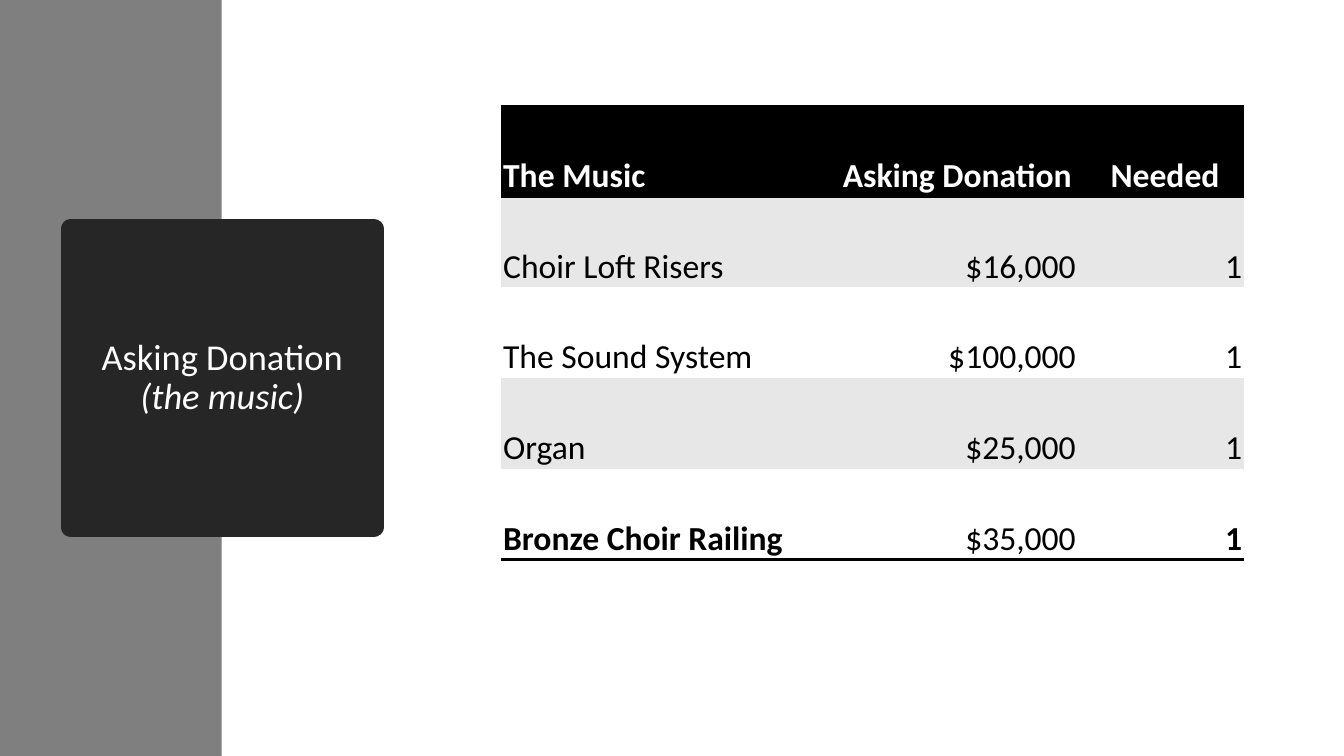
"""Build the slide that lists the asking donations for the music."""
from pptx import Presentation
from pptx.dml.color import RGBColor
from pptx.enum.shapes import MSO_SHAPE
from pptx.enum.text import MSO_ANCHOR, MSO_AUTO_SIZE, PP_ALIGN
from pptx.oxml import parse_xml
from pptx.oxml.ns import nsdecls, qn
from pptx.util import Inches, Pt

RECTANGLE = MSO_SHAPE.RECTANGLE
MIDDLE, BOTTOM = MSO_ANCHOR.MIDDLE, MSO_ANCHOR.BOTTOM
LEFT, CENTER, RIGHT = PP_ALIGN.LEFT, PP_ALIGN.CENTER, PP_ALIGN.RIGHT
NO_AUTOFIT = MSO_AUTO_SIZE.NONE
FONT_NAME = "Calibri"
PLAIN_TABLE_STYLE = "{2D5ABB26-0587-4C30-8999-92F81FD0307C}"
BLACK, WHITE, LIGHT_GRAY = "000000", "FFFFFF", "E7E7E7"
MID_GRAY, CHARCOAL = "7F7F7F", "262626"


def paint(color_owner, hex_color):
    """Give a fill or a font one solid colour."""
    if hasattr(color_owner, "solid"):
        color_owner.solid()
        color_owner.fore_color.rgb = RGBColor.from_string(hex_color)
    else:
        color_owner.color.rgb = RGBColor.from_string(hex_color)


def add_run(paragraph, text, size, hex_color, bold=False, italic=False):
    """Append one formatted run to a paragraph."""
    run = paragraph.add_run()
    run.text = text
    run.font.name = FONT_NAME
    run.font.size = Pt(size)
    run.font.bold = bold
    run.font.italic = italic
    paint(run.font, hex_color)


presentation = Presentation()
presentation.slide_width = Inches(13.33)
presentation.slide_height = Inches(7.5)
slide = presentation.slides.add_slide(presentation.slide_layouts[5])
paint(slide.background.fill, BLACK)

for panel_width, panel_color in ((13.33, WHITE), (2.2, MID_GRAY)):
    panel = slide.shapes.add_shape(RECTANGLE, 0, 0, Inches(panel_width), Inches(7.5))
    panel.shadow.inherit = False
    paint(panel.fill, panel_color)
    panel.line.fill.background()

title = slide.shapes.title
title.element.getparent().append(title.element)
title.left, title.top = Inches(0.7), Inches(2.27)
title.width, title.height = Inches(3.01), Inches(2.96)
paint(title.fill, CHARCOAL)
paint(title.line.fill, CHARCOAL)
title.line.width = Pt(13.75)
title.text_frame.word_wrap = True
title.text_frame.auto_size = NO_AUTOFIT
title.text_frame.vertical_anchor = MIDDLE
title_paragraph = title.text_frame.paragraphs[0]
title_paragraph.alignment = CENTER
title_paragraph.line_spacing = 0.9
add_run(title_paragraph, "Asking Donation", 26, WHITE)
title_paragraph.add_line_break()
add_run(title_paragraph, "(the music)", 26, WHITE, italic=True)

donation_rows = [
    ("The Music", "Asking Donation", "Needed"),
    ("Choir Loft Risers", "$16,000", "1"),
    ("The Sound System", "$100,000", "1"),
    ("Organ", "$25,000", "1"),
    ("Bronze Choir Railing", "$35,000", "1"),
]
column_widths = (3.25, 2.55, 1.57)
last_row = len(donation_rows) - 1

table_frame = slide.shapes.add_table(
    len(donation_rows), len(column_widths),
    Inches(4.97), Inches(1.05), Inches(7.37), Inches(4.5))
table = table_frame.table
table.horz_banding = False
for style_id in table_frame.element.iter(qn("a:tableStyleId")):
    style_id.text = PLAIN_TABLE_STYLE
for column, column_width in zip(table.columns, column_widths):
    column.width = Inches(column_width)

for row_index, row_texts in enumerate(donation_rows):
    table.rows[row_index].height = Inches(0.9)
    is_header = row_index == 0
    if is_header:
        row_fill, text_color, border_sides = BLACK, WHITE, ("lnT", "lnB")
    else:
        row_fill = LIGHT_GRAY if row_index % 2 else WHITE
        text_color = BLACK
        border_sides = ("lnB",) if row_index == last_row else ()

    for column_index, text in enumerate(row_texts):
        is_amount = column_index == 1 and not is_header
        cell = table.cell(row_index, column_index)
        cell.vertical_anchor = BOTTOM
        cell.margin_left = cell.margin_top = Inches(0.02)
        cell.margin_right = Inches(0.1 if is_amount else 0.02)
        cell.margin_bottom = 0
        cell_properties = cell._tc.get_or_add_tcPr()
        for side in border_sides:
            cell_properties.append(parse_xml(
                f'<a:{side} {nsdecls("a")} w="{Pt(2)}"><a:solidFill>'
                f'<a:srgbClr val="{BLACK}"/></a:solidFill></a:{side}>'))
        paint(cell.fill, row_fill)

        paragraph = cell.text_frame.paragraphs[0]
        if column_index == 0:
            paragraph.alignment = LEFT
        else:
            paragraph.alignment = CENTER if is_header else RIGHT
        is_bold = is_header or (row_index == last_row and not is_amount)
        add_run(paragraph, text, 24, text_color, bold=is_bold)

presentation.save("out.pptx")
